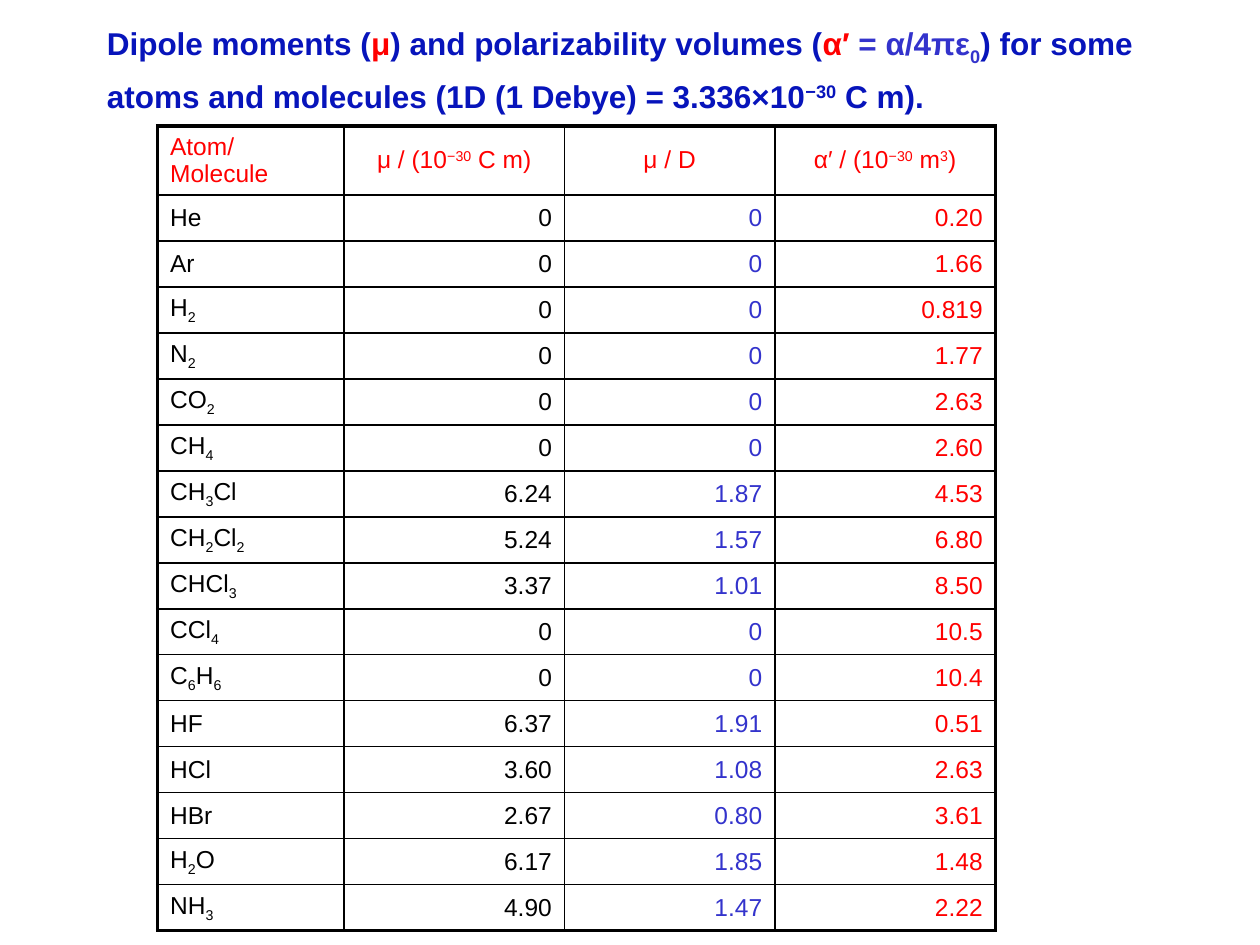
from itertools import groupby

from lxml.etree import SubElement
from pptx import Presentation
from pptx.dml.color import RGBColor
from pptx.enum.text import MSO_ANCHOR, PP_ALIGN
from pptx.oxml.ns import qn
from pptx.util import Inches, Pt

FONT = "Arial"
BLACK, RED, NAVY, VIOLET = "000000", "FF0000", "0714BB", "3333CC"
SUBSCRIPT, NORMAL, SUPERSCRIPT = -25, 0, 30
THIN, THICK = 1, 2.25
COLUMN_WIDTHS = (1.48, 1.75, 1.67, 1.75)
HEADER_HEIGHT, ROW_HEIGHT = 0.53, 0.365
VALUE_COLORS = (BLACK, VIOLET, RED)

TITLE = [
    ("Dipole moments (", NAVY, NORMAL, 18),
    ("μ", RED, NORMAL, 18),
    (") and polarizability volumes (", NAVY, NORMAL, 18),
    ("α′ ", RED, NORMAL, 18),
    ("= α/4πε", VIOLET, NORMAL, 18),
    ("0", VIOLET, SUBSCRIPT, 18),
    (") for some atoms and molecules (1D (1 Debye) = 3.336×10", NAVY, NORMAL, 18),
    ("−30", NAVY, SUPERSCRIPT, 18),
    (" C m).", NAVY, NORMAL, 18),
    (" ", NAVY, NORMAL, 32),
]
HEADINGS = [
    [("Atom/Molecule", NORMAL)],
    [("μ / (10", NORMAL), ("−30", SUPERSCRIPT), (" C m)", NORMAL)],
    [("μ / D", NORMAL)],
    [("α′ / (10", NORMAL), ("−30", SUPERSCRIPT), (" m", NORMAL),
     ("3", SUPERSCRIPT), (")", NORMAL)],
]
SUBSTANCES = [
    ("He", "0", "0", "0.20"),
    ("Ar", "0", "0", "1.66"),
    ("H2", "0", "0", "0.819"),
    ("N2", "0", "0", "1.77"),
    ("CO2", "0", "0", "2.63"),
    ("CH4", "0", "0", "2.60"),
    ("CH3Cl", "6.24", "1.87", "4.53"),
    ("CH2Cl2", "5.24", "1.57", "6.80"),
    ("CHCl3", "3.37", "1.01", "8.50"),
    ("CCl4", "0", "0", "10.5"),
    ("C6H6", "0", "0", "10.4"),
    ("HF", "6.37", "1.91", "0.51"),
    ("HCl", "3.60", "1.08", "2.63"),
    ("HBr", "2.67", "0.80", "3.61"),
    ("H2O", "6.17", "1.85", "1.48"),
    ("NH3", "4.90", "1.47", "2.22"),
]


def set_color(color_owner, hex_color):
    """Apply a hex colour to a font."""
    color_owner.color.rgb = RGBColor.from_string(hex_color)


def add_run(paragraph, text, color, baseline=NORMAL, size=14, bold=False):
    """Append one formatted run, raised or lowered by its baseline percentage."""
    run = paragraph.add_run()
    run.text = text
    run.font.name, run.font.size, run.font.bold = FONT, Pt(size), bold
    set_color(run.font, color)
    if baseline:
        run.font._element.set("baseline", str(baseline * 1000))


def formula_parts(formula):
    """Split a chemical formula into plain letters and subscript digits."""
    return [("".join(part), SUBSCRIPT if is_digit else NORMAL)
            for is_digit, part in groupby(formula, str.isdigit)]


def set_borders(cell, **widths):
    """Draw black cell borders with the given widths in points."""
    properties = cell._tc.get_or_add_tcPr()
    for side, width in widths.items():
        line = SubElement(properties, qn(f"a:ln{side}"), w=str(Pt(width)))
        SubElement(SubElement(line, qn("a:solidFill")), qn("a:srgbClr"), val=BLACK)


def fill_cell(cell, parts, color, alignment):
    """Write the text parts into a transparent, vertically centred cell."""
    cell.fill.background()
    cell.vertical_anchor = MSO_ANCHOR.MIDDLE
    cell.margin_top = cell.margin_bottom = Inches(0.04)
    paragraph = cell.text_frame.paragraphs[0]
    paragraph.alignment = alignment
    for text, baseline in parts:
        add_run(paragraph, text, color, baseline)


def add_title(slide):
    """Add the heading above the table."""
    box = slide.shapes.add_textbox(Inches(0.75), Inches(0.33), Inches(8.5), Inches(0.5))
    frame = box.text_frame
    frame.word_wrap = True
    frame.vertical_anchor = MSO_ANCHOR.MIDDLE
    paragraph = frame.paragraphs[0]
    paragraph.line_spacing = 0.85
    for text, color, baseline, size in TITLE:
        add_run(paragraph, text, color, baseline, size, bold=True)


def add_property_table(slide):
    """Add the table of dipole moments and polarizability volumes."""
    row_count, column_count = len(SUBSTANCES) + 1, len(HEADINGS)
    height = HEADER_HEIGHT + ROW_HEIGHT * len(SUBSTANCES)
    table = slide.shapes.add_table(
        row_count, column_count, Inches(1.25), Inches(1),
        Inches(sum(COLUMN_WIDTHS)), Inches(height)).table
    table.first_row = table.horz_banding = False
    for column, width in zip(table.columns, COLUMN_WIDTHS):
        column.width = Inches(width)
    for index, row in enumerate(table.rows):
        row.height = Inches(ROW_HEIGHT if index else HEADER_HEIGHT)
        for position, cell in enumerate(row.cells):
            set_borders(cell,
                        L=THIN if position else THICK,
                        R=THICK if position == column_count - 1 else THIN,
                        T=THIN if index else THICK,
                        B=THICK if index == row_count - 1 else THIN)

    for position, heading in enumerate(HEADINGS):
        alignment = PP_ALIGN.CENTER if position else PP_ALIGN.LEFT
        fill_cell(table.cell(0, position), heading, RED, alignment)
    for index, (formula, *values) in enumerate(SUBSTANCES, start=1):
        fill_cell(table.cell(index, 0), formula_parts(formula), BLACK, PP_ALIGN.LEFT)
        for position, (value, color) in enumerate(zip(values, VALUE_COLORS), start=1):
            fill_cell(table.cell(index, position), [(value, NORMAL)], color, PP_ALIGN.RIGHT)


def main():
    """Build and save the slide."""
    presentation = Presentation()
    presentation.slide_width, presentation.slide_height = Inches(10), Inches(7.5)
    slide = presentation.slides.add_slide(presentation.slide_layouts[6])
    add_title(slide)
    add_property_table(slide)
    presentation.save("out.pptx")


if __name__ == "__main__":
    main()
